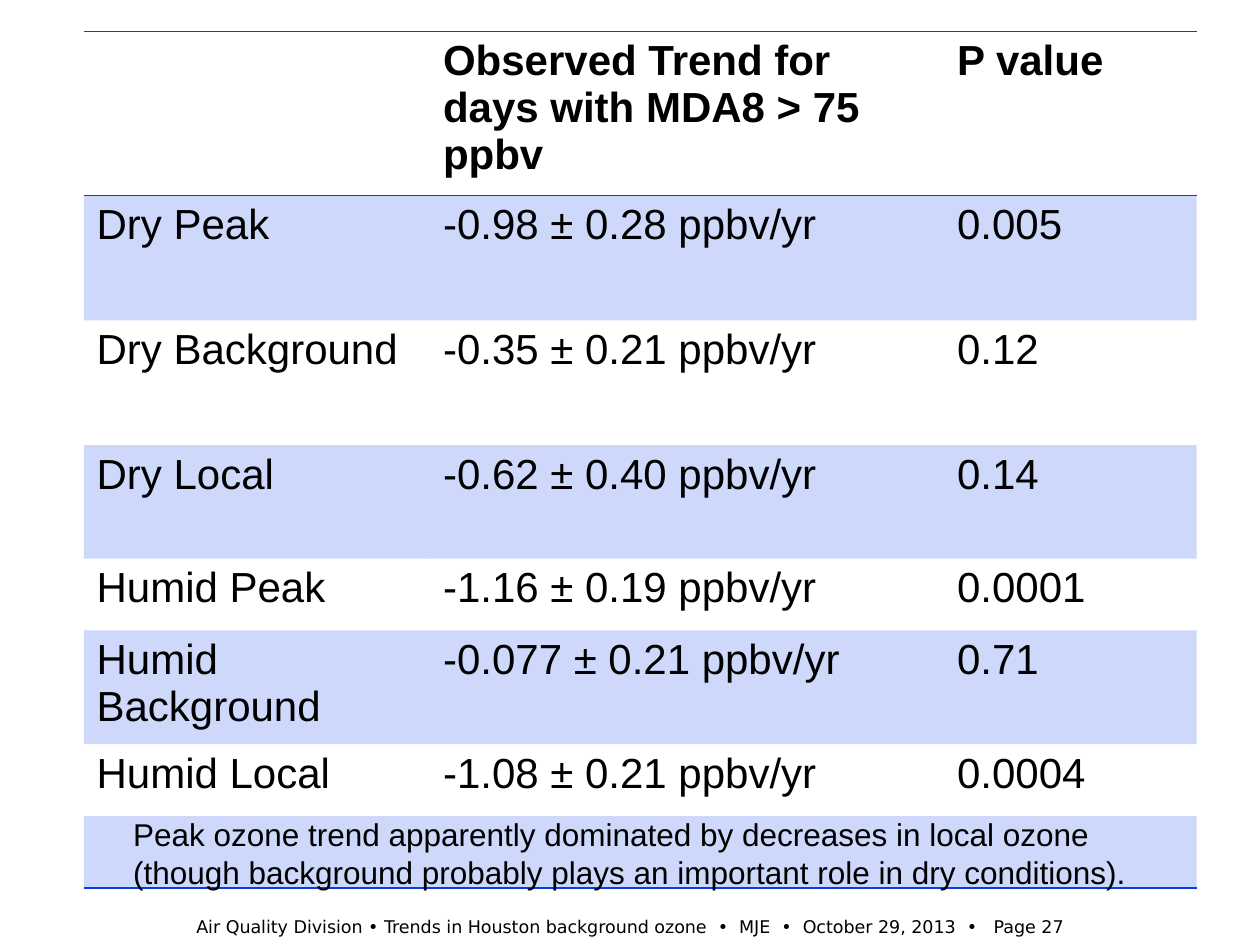
import lxml.etree
import pptx
import pptx.dml.color
import pptx.enum.text
import pptx.oxml.ns
import pptx.util

Pt = pptx.util.Pt
qn = pptx.oxml.ns.qn

BLUE = "063DE8"
BLACK = "000000"
PLAIN_TABLE_STYLE = "{2D5ABB26-0587-4C30-8999-92F81FD0307C}"

COLUMN_WIDTHS = (198, 293.76, 144)
TREND_ROWS = (
    (93.6, ("", "Observed Trend for days with MDA8 > 75 ppbv", "P value")),
    (71.4, ("Dry Peak", "-0.98 ± 0.28 ppbv/yr", "0.005")),
    (71.4, ("Dry Background", "-0.35 ± 0.21 ppbv/yr", "0.12")),
    (64.8, ("Dry Local", "-0.62 ± 0.40 ppbv/yr", "0.14")),
    (41.1, ("Humid Peak", "-1.16 ± 0.19 ppbv/yr", "0.0001")),
    (65, ("Humid Background", "-0.077 ± 0.21 ppbv/yr", "0.71")),
    (41.1, ("Humid Local", "-1.08 ± 0.21 ppbv/yr", "0.0004")),
    (41.1, ("", "", "")),
)
TAKEAWAY = (
    "Peak ozone trend apparently dominated by decreases in local ozone "
    "(though background probably plays an important role in dry conditions)."
)
FOOTER = (
    "Air Quality Division • Trends in Houston background ozone  •  MJE  •  "
    "October 29, 2013  •   Page 27"
)


def rgb(hex_colour):
    return pptx.dml.color.RGBColor.from_string(hex_colour)


def add_run(paragraph, text, size, font="Arial", bold=False):
    run = paragraph.add_run()
    run.text = text
    run.font.name = font
    run.font.size = Pt(size)
    run.font.bold = bold
    run.font.color.rgb = rgb(BLACK)


def tint_cell(cell):
    """Fill the cell with blue at 20% opacity."""
    cell.fill.solid()
    cell.fill.fore_color.rgb = rgb(BLUE)
    colour = cell._tc.tcPr.find(".//" + qn("a:srgbClr"))
    lxml.etree.SubElement(colour, qn("a:alpha"), val="20000")


def rule_cell(cell, edges):
    """Draw 1 pt lines on the edges, given in schema order ahead of the fill."""
    properties = cell._tc.get_or_add_tcPr()
    for position, edge in enumerate(edges):
        line = lxml.etree.Element(qn(f"a:ln{edge}"), w=str(Pt(1)))
        fill = lxml.etree.SubElement(line, qn("a:solidFill"))
        lxml.etree.SubElement(fill, qn("a:srgbClr"), val=BLUE)
        properties.insert(position, line)


def add_trend_table(slide):
    height = sum(row_height for row_height, _ in TREND_ROWS)
    frame = slide.shapes.add_table(
        len(TREND_ROWS), len(COLUMN_WIDTHS),
        Pt(48), Pt(18), Pt(sum(COLUMN_WIDTHS)), Pt(height),
    )
    table = frame.table
    table._tbl.tblPr.find(qn("a:tableStyleId")).text = PLAIN_TABLE_STYLE
    for column, width in zip(table.columns, COLUMN_WIDTHS):
        column.width = Pt(width)

    edges_by_row = {0: "TB", len(TREND_ROWS) - 1: "B"}
    for row_index, (row_height, texts) in enumerate(TREND_ROWS):
        table.rows[row_index].height = Pt(row_height)
        for cell, text in zip(table.rows[row_index].cells, texts):
            if text:
                add_run(cell.text_frame.paragraphs[0], text, 24, bold=row_index == 0)
            if row_index % 2:
                tint_cell(cell)
            else:
                cell.fill.background()
            rule_cell(cell, edges_by_row.get(row_index, ""))


def add_caption(slide, text, left, top, width, height, size, font="Arial", align=None):
    caption = slide.shapes.add_textbox(Pt(left), Pt(top), Pt(width), Pt(height))
    frame = caption.text_frame
    frame.word_wrap = True
    frame.auto_size = pptx.enum.text.MSO_AUTO_SIZE.SHAPE_TO_FIT_TEXT
    frame.paragraphs[0].alignment = align
    add_run(frame.paragraphs[0], text, size, font)


def main():
    deck = pptx.Presentation()
    deck.slide_width, deck.slide_height = Pt(720), Pt(540)
    slide = deck.slides.add_slide(deck.slide_layouts[6])
    add_caption(slide, FOOTER, 0, 520, 720, 19.4, 10, "DejaVu Sans",
                pptx.enum.text.PP_ALIGN.CENTER)
    add_trend_table(slide)
    add_caption(slide, TAKEAWAY, 69, 462.3, 615, 51, 18)
    deck.save("out.pptx")


if __name__ == "__main__":
    main()
